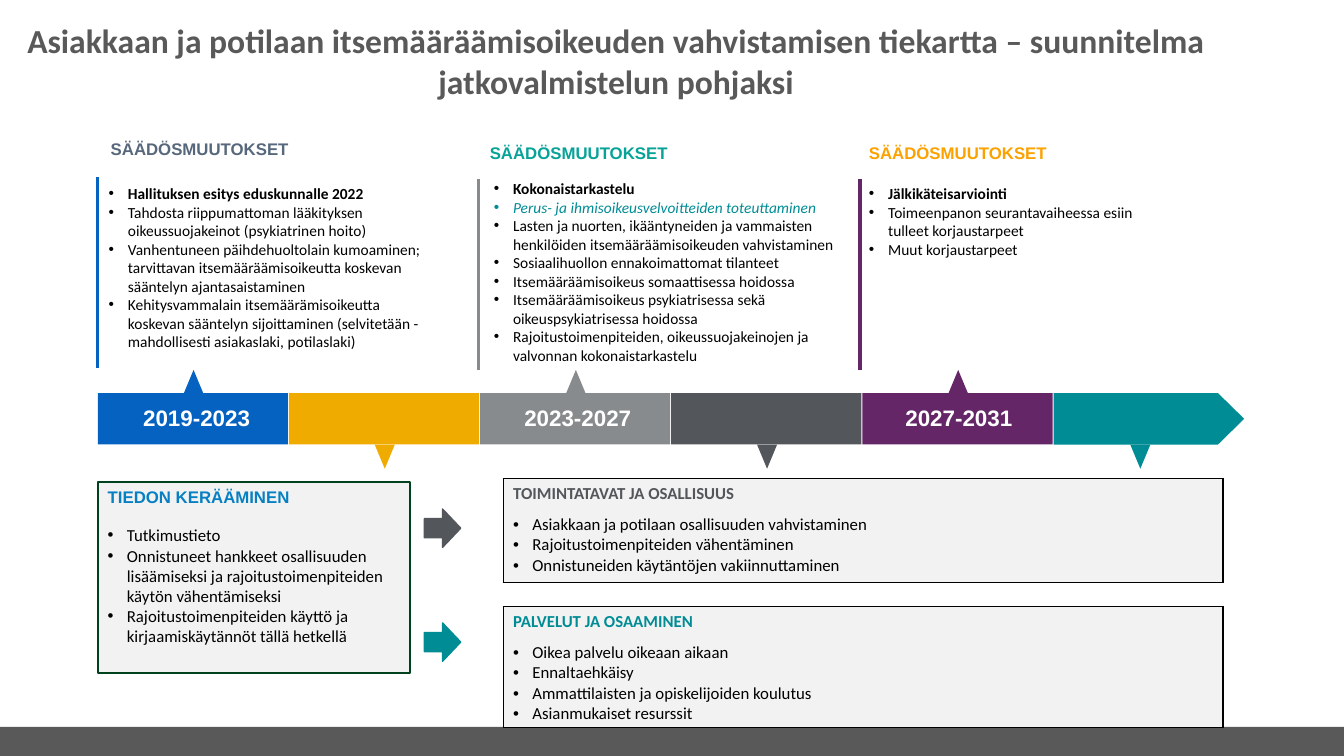
from lxml.etree import SubElement
from pptx import Presentation
from pptx.dml.color import RGBColor
from pptx.enum.shapes import MSO_CONNECTOR, MSO_SHAPE
from pptx.enum.text import MSO_ANCHOR, PP_ALIGN
from pptx.oxml.ns import qn
from pptx.util import Inches, Pt

WIDTH, HEIGHT = 13.33, 7.5
LEFT, COLUMN = 0.97, 3.78
BAND_TOP, BAND_HEIGHT = 3.9, 0.51
SEGMENT = (10.45 - LEFT) / 5
BLUE, YELLOW, GREY, DARK, PURPLE, TEAL = "0562C1", "F0AB00", "888B8D", "53565A", "642667", "008C95"
BLACK, PANEL, TITLE = "000000", "F2F2F2", "595959"

REFORMS = [
    (["Hallituksen esitys eduskunnalle 2022",
      "Tahdosta riippumattoman lääkityksen oikeussuojakeinot (psykiatrinen hoito)",
      "Vanhentuneen päihdehuoltolain kumoaminen; tarvittavan itsemääräämisoikeutta koskevan "
      "sääntelyn ajantasaistaminen",
      "Kehitysvammalain itsemäärämisoikeutta koskevan sääntelyn sijoittaminen (selvitetään - "
      "mahdollisesti asiakaslaki, potilaslaki)"],
     "2019-2023", "57687C", BLUE, (0.03, 1.33), (0.01, 1.78, 3.49), 1.76),
    (["Kokonaistarkastelu",
      "Perus- ja ihmisoikeusvelvoitteiden toteuttaminen",
      "Lasten ja nuorten, ikääntyneiden ja vammaisten henkilöiden itsemääräämisoikeuden vahvistaminen",
      "Sosiaalihuollon ennakoimattomat tilanteet",
      "Itsemääräämisoikeus somaattisessa hoidossa",
      "Itsemääräämisoikeus psykiatrisessa sekä oikeuspsykiatrisessa hoidossa",
      "Rajoitustoimenpiteiden, oikeussuojakeinojen ja valvonnan kokonaistarkastelu"],
     "2023-2027", "07A398", GREY, (0.01, 1.37), (0.05, 1.73, 3.71), 1.78),
    (["Jälkikäteisarviointi",
      "Toimeenpanon seurantavaiheessa esiin tulleet korjaustarpeet",
      "Muut korjaustarpeet"],
     "2027-2031", "FBA200", PURPLE, (-0.01, 1.37), (-0.01, 1.78, 2.82), 1.78),
]
RESEARCH = ["Tutkimustieto",
            "Onnistuneet hankkeet osallisuuden lisäämiseksi ja rajoitustoimenpiteiden käytön vähentämiseksi",
            "Rajoitustoimenpiteiden käyttö ja kirjaamiskäytännöt tällä hetkellä"]
PRACTICES = ["Asiakkaan ja potilaan osallisuuden vahvistaminen",
             "Rajoitustoimenpiteiden vähentäminen",
             "Onnistuneiden käytäntöjen vakiinnuttaminen"]
SERVICES = ["Oikea palvelu oikeaan aikaan", "Ennaltaehkäisy",
            "Ammattilaisten ja opiskelijoiden koulutus", "Asianmukaiset resurssit"]


def color(value):
    """Turn a hex string into a colour."""
    return RGBColor.from_string(value)


def box(*lengths):
    """Turn inches into slide lengths."""
    return [Inches(length) for length in lengths]


def write(paragraph, text, size, ink, bold=False, italic=False, face="Calibri"):
    """Fill a paragraph with one formatted run."""
    paragraph.text = text
    font = paragraph.runs[0].font
    font.size, font.name, font.bold, font.italic = Pt(size), face, bold, italic
    font.color.rgb = color(ink)


def add_bullet(paragraph):
    """Give a paragraph a hanging bullet."""
    properties = paragraph._p.get_or_add_pPr()
    properties.set("marL", str(Inches(0.19)))
    properties.set("indent", str(-Inches(0.19)))
    SubElement(properties, qn("a:buFont"), typeface="Arial")
    SubElement(properties, qn("a:buChar"), char="•")


def write_bullets(frame, items, size, first=None):
    """Write a bulleted list, starting in the given paragraph."""
    for index, item in enumerate(items):
        paragraph = first if index == 0 and first is not None else frame.add_paragraph()
        paragraph.alignment = PP_ALIGN.LEFT
        add_bullet(paragraph)
        write(paragraph, item, size, BLACK)


def add_text(slide, place, text="", size=12, ink=BLACK, face="Arial", align=PP_ALIGN.LEFT):
    """Add a wrapping text box, with a bold line if text is given."""
    frame = slide.shapes.add_textbox(*box(*place)).text_frame
    frame.word_wrap = True
    if text:
        write(frame.paragraphs[0], text, size, ink, True, face=face)
        frame.paragraphs[0].alignment = align
    return frame


def paint(shape, fill, line=None, weight=1):
    """Set a flat fill and an optional outline."""
    shape.shadow.inherit = False
    shape.fill.solid()
    shape.fill.fore_color.rgb = color(fill)
    if line:
        shape.line.color.rgb = color(line)
        shape.line.width = Pt(weight)
    else:
        shape.line.fill.background()


def add_block(slide, kind, place, fill, line=None, weight=1):
    """Add a flat preset shape."""
    block = slide.shapes.add_shape(kind, *box(*place))
    paint(block, fill, line, weight)
    return block


def add_rule(slide, x, top, ink):
    """Add the vertical line beside a column."""
    rule = slide.shapes.add_connector(MSO_CONNECTOR.STRAIGHT, *box(x, top, x, top + 1.89))
    rule.line.color.rgb, rule.line.width = color(ink), Pt(2.25)
    SubElement(rule._element.spPr, qn("a:effectLst"))


def add_timeline(slide):
    """Draw the band of periods with its pointers."""
    tip = slide.shapes.build_freeform(Inches(10.45), Inches(BAND_TOP))
    bottom = BAND_TOP + BAND_HEIGHT
    points = [(12.08, BAND_TOP), (12.34, BAND_TOP + BAND_HEIGHT / 2), (12.08, bottom), (10.45, bottom)]
    tip.add_line_segments([box(*point) for point in points])
    paint(tip.convert_to_shape(), TEAL)
    for index, fill in enumerate([BLUE, YELLOW, GREY, DARK, PURPLE, TEAL]):
        left = LEFT + SEGMENT * index
        if fill != TEAL:
            add_block(slide, MSO_SHAPE.RECTANGLE, (left, BAND_TOP, SEGMENT - 0.01, BAND_HEIGHT), fill)
        below = index % 2
        pointer = add_block(slide, MSO_SHAPE.ISOSCELES_TRIANGLE,
                            (left + (0.76 if fill == TEAL else 0.85), bottom if below else 3.67, 0.2, 0.24),
                            fill)
        pointer.rotation = 180 * below


def add_reform(slide, index, reform):
    """Add one column of law changes and its period."""
    items, period, heading_ink, rule_ink, (shift, heading_top), (inset, top, width), rule_top = reform
    left = LEFT + COLUMN * index
    add_text(slide, (left + shift, heading_top, 3.5, 0.36), "SÄÄDÖSMUUTOKSET", ink=heading_ink)
    frame = add_text(slide, (left + inset, top, width, 1.8))
    write_bullets(frame, items, 11, frame.paragraphs[0])
    frame.paragraphs[0].runs[0].font.bold = True
    if period == "2023-2027":
        emphasis = frame.paragraphs[1].runs[0].font
        emphasis.italic, emphasis.color.rgb = True, color(TEAL)
    add_rule(slide, left, rule_top, rule_ink)
    add_text(slide, (left + 0.33, 3.96, 1.3, 0.37), period, 16, "FFFFFF", align=PP_ALIGN.CENTER)


def add_research(slide):
    """Add the panel on gathering knowledge."""
    panel = add_block(slide, MSO_SHAPE.RECTANGLE, (LEFT, 4.78, 3.1, 1.9), PANEL, "00421E", 1.5)
    frame = panel.text_frame
    frame.word_wrap, frame.vertical_anchor = True, MSO_ANCHOR.TOP
    write(frame.paragraphs[0], "TIEDON KERÄÄMINEN", 12, "0680C3", True, face="Arial")
    frame.paragraphs[0].alignment = PP_ALIGN.LEFT
    write_bullets(frame, RESEARCH, 12)
    frame.paragraphs[1].space_before = Pt(13)


def style_cell(cell, edges):
    """Draw the named edges of a cell and fill it."""
    properties = cell._tc.get_or_add_tcPr()
    for edge in "LRTB":
        border = SubElement(properties, qn(f"a:ln{edge}"), w=str(Pt(1)))
        if edge in edges:
            SubElement(SubElement(border, qn("a:solidFill")), qn("a:srgbClr"), val=BLACK)
        else:
            SubElement(border, qn("a:noFill"))
    cell.fill.solid()
    cell.fill.fore_color.rgb = color(PANEL)


def add_goals(slide, top, split, heading, ink, items, list_height):
    """Add a framed table with a heading and goals."""
    table = slide.shapes.add_table(2, 2, *box(4.99, top, 7.14, 0.3 + list_height)).table
    table.first_row = table.horz_banding = False
    table.columns[0].width, table.columns[1].width = box(split, 7.14 - split)
    table.rows[0].height, table.rows[1].height = box(0.3, list_height)
    table.cell(0, 0).merge(table.cell(0, 1))
    for row, column, edges in [(0, 0, "LRT"), (0, 1, "RT"), (1, 0, "LB"), (1, 1, "RB")]:
        style_cell(table.cell(row, column), edges)
    write(table.cell(0, 0).text_frame.paragraphs[0], heading, 12, ink, True)
    goals = table.cell(1, 0).text_frame
    write_bullets(goals, items, 12, goals.paragraphs[0])


def main():
    """Build the roadmap slide."""
    deck = Presentation()
    deck.slide_width, deck.slide_height = box(WIDTH, HEIGHT)
    slide = deck.slides.add_slide(deck.slide_layouts[6])
    add_block(slide, MSO_SHAPE.RECTANGLE, (0, 7.21, WIDTH, 0.29), TITLE)
    title = add_text(slide, (0, 0.26, 12.22, 0.68),
                     "Asiakkaan ja potilaan itsemääräämisoikeuden vahvistamisen tiekartta – "
                     "suunnitelma jatkovalmistelun pohjaksi", 24, TITLE, "Calibri", PP_ALIGN.CENTER)
    title.vertical_anchor = MSO_ANCHOR.MIDDLE
    add_timeline(slide)
    for index, reform in enumerate(REFORMS):
        add_reform(slide, index, reform)
    add_research(slide)
    for top, fill in [(5.05, DARK), (6.18, TEAL)]:
        add_block(slide, MSO_SHAPE.RIGHT_ARROW, (4.21, top, 0.36, 0.38), fill, fill)
    add_goals(slide, 4.75, 5.33, "TOIMINTATAVAT JA OSALLISUUS", DARK, PRACTICES, 0.73)
    add_goals(slide, 6.02, 5.22, "PALVELUT JA OSAAMINEN", TEAL, SERVICES, 0.9)
    deck.save("out.pptx")


if __name__ == "__main__":
    main()
